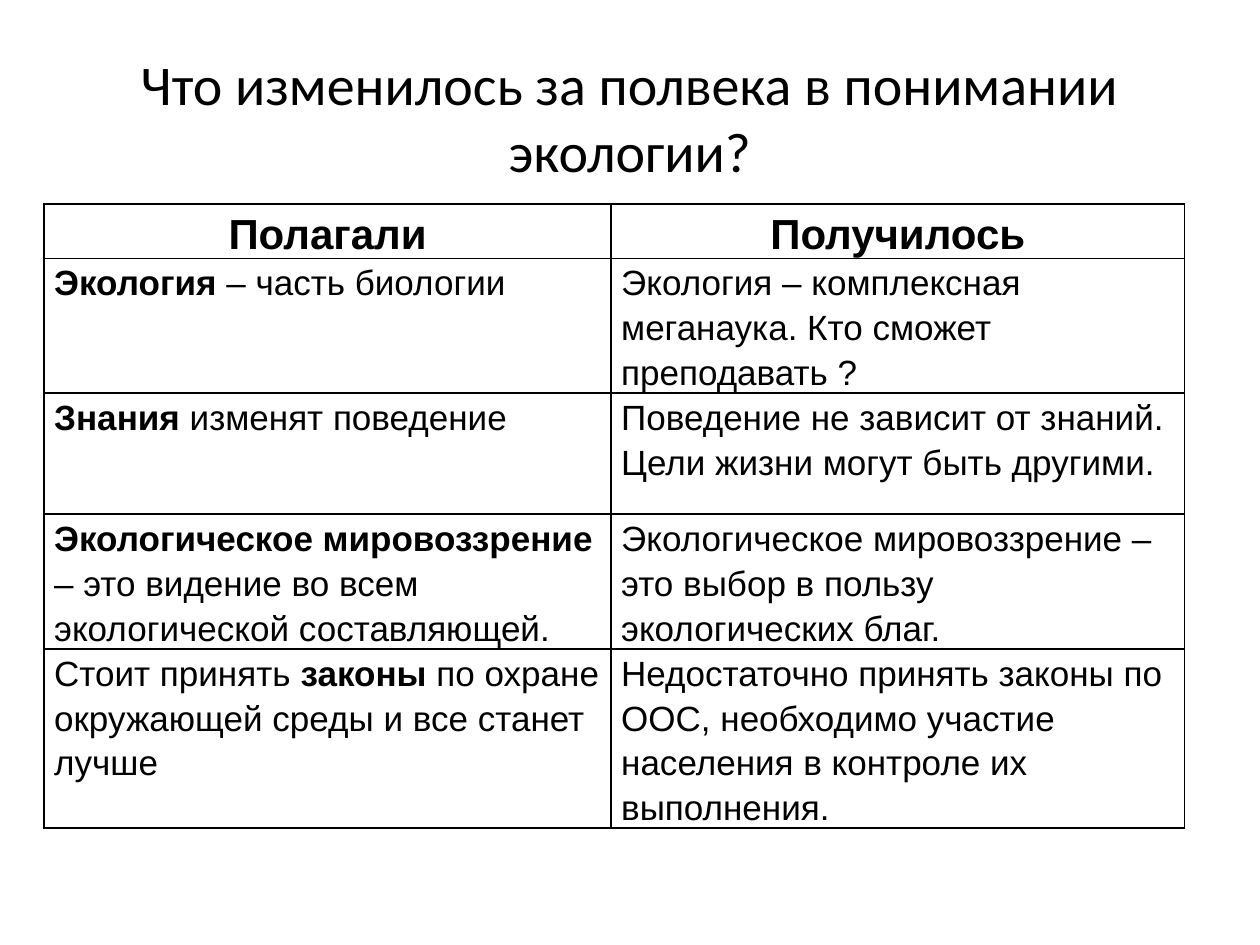
from dataclasses import dataclass

from pptx import Presentation
from pptx.dml.color import RGBColor
from pptx.enum.text import MSO_ANCHOR, PP_ALIGN as Align
from pptx.oxml import parse_xml
from pptx.oxml.ns import nsdecls
from pptx.util import Inches, Pt


@dataclass(frozen=True)
class Theme:
    ink: str = "000000"
    title_font: str = "Calibri"
    table_font: str = "Arial"
    title_size: int = 32
    header_size: int = 24
    body_size: int = 20
    line_pitch: float = 1.28  # line height as a multiple of the type size
    border_width: int = 1


@dataclass(frozen=True)
class Span:
    text: str
    bold: bool = False


@dataclass(frozen=True)
class Comparison:
    expected: tuple[Span, ...]
    outcome: tuple[Span, ...]


THEME = Theme()
TITLE = "Что изменилось за полвека в понимании экологии?"
HEADER = Comparison((Span("Полагали", True),), (Span("Получилось", True),))
COMPARISONS = [
    Comparison(
        (Span("Экология", True), Span(" – часть биологии")),
        (Span("Экология – комплексная меганаука. Кто сможет преподавать ?"),),
    ),
    Comparison(
        (Span("Знания", True), Span(" изменят поведение")),
        (Span("Поведение не зависит от знаний. Цели жизни могут быть другими."),),
    ),
    Comparison(
        (Span("Экологическое мировоззрение ", True),
         Span("– это видение во всем экологической составляющей.")),
        (Span("Экологическое мировоззрение – это выбор в пользу экологических благ."),),
    ),
    Comparison(
        (Span("Стоит принять "), Span("законы", True),
         Span(" по охране окружающей среды и все станет лучше")),
        (Span("Недостаточно принять законы по ООС, необходимо участие "
              "населения в контроле их выполнения."),),
    ),
]
COLUMN_WIDTHS = (4.5, 4.55)
ROW_HEIGHTS = (0.43, 1.07, 0.96, 1.07, 1.42)


def add_spans(para, spans: tuple[Span, ...], font: str, size: int) -> None:
    for span in spans:
        run = para.add_run()
        run.text = span.text
        run.font.name = font
        run.font.size = Pt(size)
        run.font.bold = span.bold
        run.font.color.rgb = RGBColor.from_string(THEME.ink)


def add_title(page) -> None:
    box = page.shapes.add_textbox(Inches(0.5), Inches(0.3), Inches(9), Inches(1.25))
    frame = box.text_frame
    frame.word_wrap = True
    frame.vertical_anchor = MSO_ANCHOR.MIDDLE
    para = frame.paragraphs[0]
    para.alignment = Align.CENTER
    add_spans(para, (Span(TITLE),), THEME.title_font, THEME.title_size)


def add_borders(cell) -> None:
    properties = cell._tc.get_or_add_tcPr()
    for position, side in enumerate(("lnL", "lnR", "lnT", "lnB")):
        properties.insert(position, parse_xml(
            f'<a:{side} {nsdecls("a")} w="{Pt(THEME.border_width)}"><a:solidFill>'
            f'<a:srgbClr val="{THEME.ink}"/></a:solidFill></a:{side}>'))


def fill_cell(cell, spans: tuple[Span, ...], is_header: bool) -> None:
    cell.margin_left = cell.margin_right = Inches(0.08)
    cell.margin_top = cell.margin_bottom = 0
    cell.fill.background()
    add_borders(cell)
    size = THEME.header_size if is_header else THEME.body_size
    para = cell.text_frame.paragraphs[0]
    para.line_spacing = Pt(size * THEME.line_pitch)
    if is_header:
        para.alignment = Align.CENTER
    add_spans(para, spans, THEME.table_font, size)


def add_comparison_table(page) -> None:
    table = page.shapes.add_table(
        len(ROW_HEIGHTS), len(COLUMN_WIDTHS), Inches(0.35), Inches(1.62),
        Inches(sum(COLUMN_WIDTHS)), Inches(sum(ROW_HEIGHTS))).table
    table.first_row = table.horz_banding = False
    for column, width in zip(table.columns, COLUMN_WIDTHS):
        column.width = Inches(width)
    for row, height in zip(table.rows, ROW_HEIGHTS):
        row.height = Inches(height)
    for index, entry in enumerate([HEADER, *COMPARISONS]):
        for column, spans in enumerate((entry.expected, entry.outcome)):
            fill_cell(table.cell(index, column), spans, is_header=index == 0)


def main() -> None:
    deck = Presentation()
    deck.slide_width, deck.slide_height = Inches(10), Inches(7.5)
    page = deck.slides.add_slide(deck.slide_layouts[6])  # blank layout
    add_title(page)
    add_comparison_table(page)
    deck.save("out.pptx")


if __name__ == "__main__":
    main()
